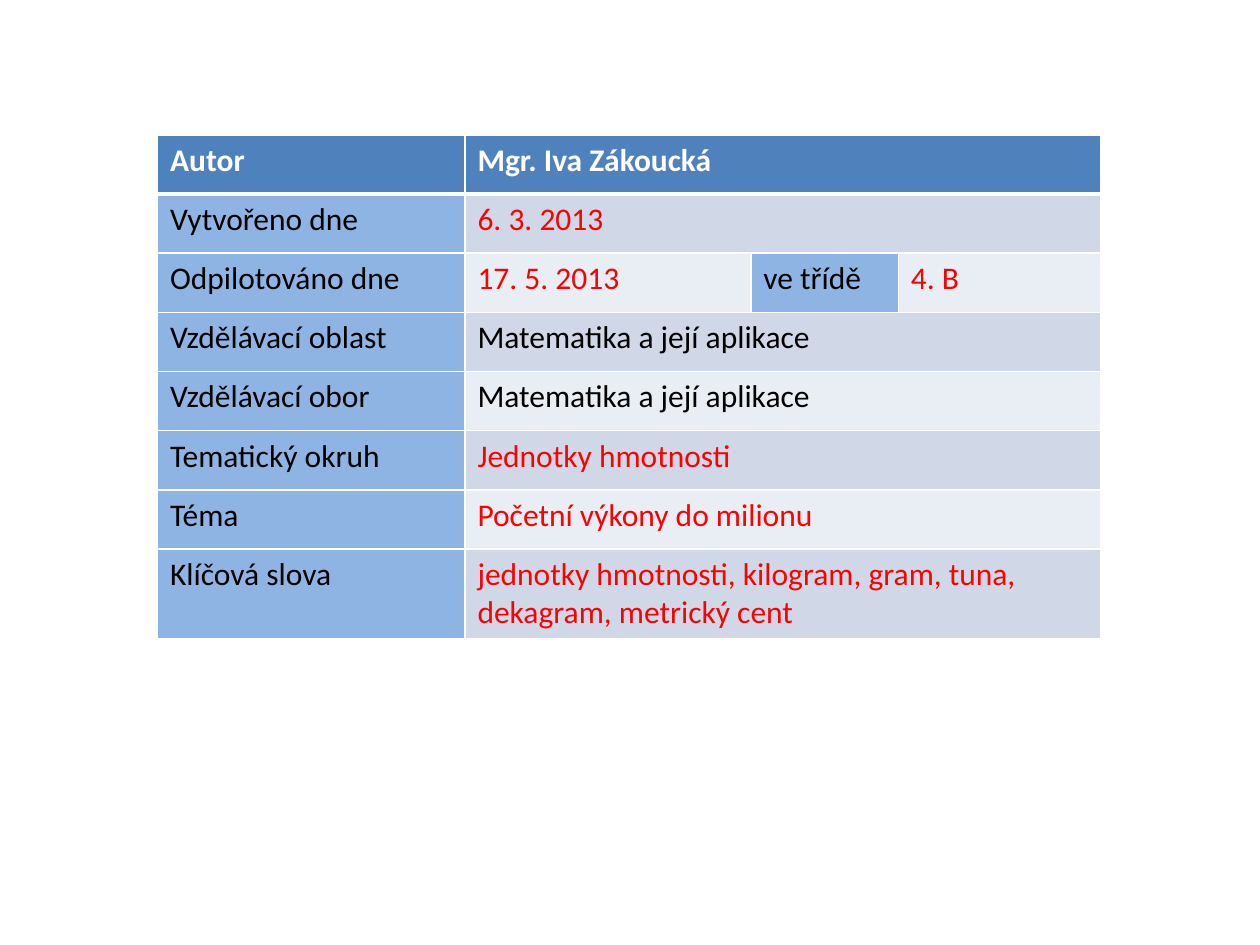
import pptx
import pptx.dml.color
import pptx.util
from lxml import etree
from pptx.oxml.ns import qn

Inches = pptx.util.Inches
Pt = pptx.util.Pt

COLORS = {
    "header": "4F81BD",
    "label": "8EB4E3",
    "odd_band": "D0D8E8",
    "even_band": "E9EDF4",
    "white": "FFFFFF",
    "black": "000000",
    "red": "FF0000",
}
COLUMN_WIDTHS = [2.44, 2.27, 1.17, 1.61]
ROW_HEIGHTS = [0.47] * 7 + [0.7]
LESSON_DETAILS = [
    ("Autor", "Mgr. Iva Zákoucká", "white"),
    ("Vytvořeno dne", "6. 3. 2013", "red"),
    ("Odpilotováno dne", "17. 5. 2013", "red"),
    ("Vzdělávací oblast", "Matematika a její aplikace", "black"),
    ("Vzdělávací obor", "Matematika a její aplikace", "black"),
    ("Tematický okruh", "Jednotky hmotnosti", "red"),
    ("Téma", "Početní výkony do milionu", "red"),
    ("Klíčová slova", "jednotky hmotnosti, kilogram, gram, tuna, "
     "dekagram, metrický cent", "red"),
]
PILOT_ROW = 2


def rgb(color):
    """Return the named colour as an RGB value."""
    return pptx.dml.color.RGBColor.from_string(COLORS[color])


def set_borders(cell, top=1, bottom=1):
    """Draw white borders, with top and bottom widths in points."""
    properties = cell._tc.get_or_add_tcPr()
    for side, width in (("L", 1), ("R", 1), ("T", top), ("B", bottom)):
        line = etree.SubElement(properties, qn(f"a:ln{side}"), w=str(Pt(width)))
        fill = etree.SubElement(line, qn("a:solidFill"))
        etree.SubElement(fill, qn("a:srgbClr"), val=COLORS["white"])


def fill_cell(cell, text, fill, color, bold=False):
    """Write text into a cell and colour it."""
    cell.fill.solid()
    cell.fill.fore_color.rgb = rgb(fill)
    cell.text = text
    font = cell.text_frame.paragraphs[0].font
    font.name = "Calibri"
    font.size = Pt(18)
    font.bold = bold
    font.color.rgb = rgb(color)


def add_lesson_table(slide, left, top):
    """Place the table of lesson details with its corner at left, top."""
    table = slide.shapes.add_table(
        len(ROW_HEIGHTS), len(COLUMN_WIDTHS), Inches(left), Inches(top),
        Inches(sum(COLUMN_WIDTHS)), Inches(sum(ROW_HEIGHTS))).table
    for column, width in zip(table.columns, COLUMN_WIDTHS):
        column.width = Inches(width)
    for index, (label, detail, color) in enumerate(LESSON_DETAILS):
        row = table.rows[index]
        row.height = Inches(ROW_HEIGHTS[index])
        for cell in row.cells:
            set_borders(cell, top=3 if index == 1 else 1,
                        bottom=3 if index == 0 else 1)
        is_header = index == 0
        band = "header" if is_header else "odd_band" if index % 2 else "even_band"
        fill_cell(table.cell(index, 0), label,
                  "header" if is_header else "label",
                  "white" if is_header else "black", is_header)
        if index != PILOT_ROW:
            table.cell(index, 1).merge(table.cell(index, 3))
        fill_cell(table.cell(index, 1), detail, band, color, is_header)
    fill_cell(table.cell(PILOT_ROW, 2), "ve třídě", "label", "black")
    fill_cell(table.cell(PILOT_ROW, 3), "4. B", "even_band", "red")


def main():
    """Build and save the slide."""
    presentation = pptx.Presentation()
    presentation.slide_width = Inches(10)
    presentation.slide_height = Inches(7.5)
    slide = presentation.slides.add_slide(presentation.slide_layouts[6])
    add_lesson_table(slide, 1.25, 1.07)
    presentation.save("out.pptx")


if __name__ == "__main__":
    main()
